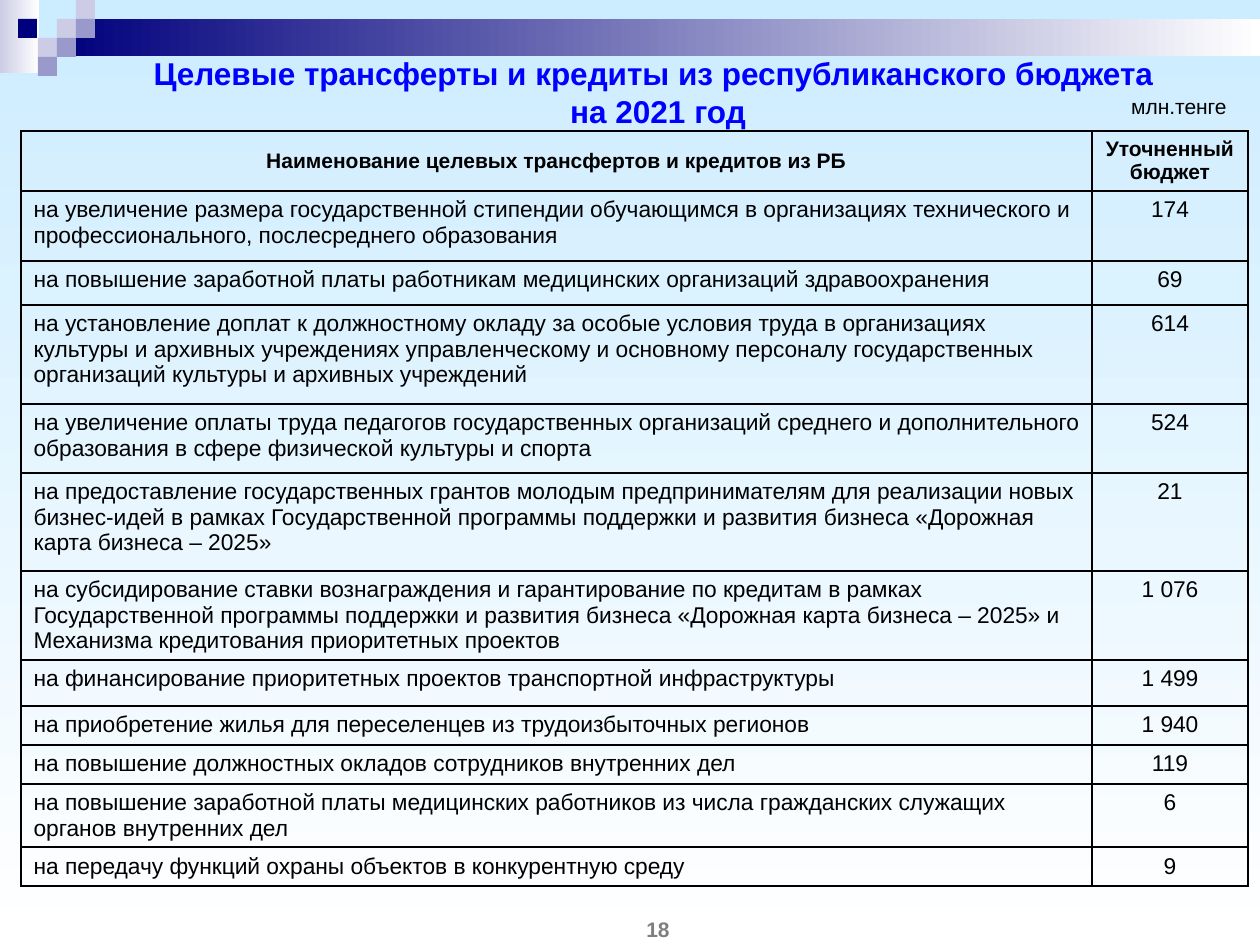
from dataclasses import dataclass

from lxml.etree import SubElement
from pptx import Presentation
from pptx.dml.color import RGBColor
from pptx.dml.fill import FillFormat
from pptx.enum.shapes import MSO_SHAPE
from pptx.enum.text import MSO_ANCHOR, PP_ALIGN
from pptx.oxml.ns import qn
from pptx.slide import Slide
from pptx.table import _Cell
from pptx.text.text import TextFrame
from pptx.util import Emu, Pt

PIXELS_PER_INCH = 126
FONT_NAME = "Arial"
BORDER_WIDTH = Pt(1)
SQUARE = 19

COLORS = {
    "sky": "CCECFF",
    "white": "FFFFFF",
    "navy": "00007D",
    "lavender": "CCCCE6",
    "violet": "9999CC",
    "title": "0000FF",
    "black": "000000",
    "gray": "7F7F7F",
}


@dataclass(frozen=True)
class Box:
    left: int
    top: int
    width: int
    height: int


@dataclass(frozen=True)
class Block:
    """A decorative rectangle; a second colour makes a left-to-right gradient."""
    box: Box
    color: str
    end_color: str = ""


@dataclass(frozen=True)
class TextStyle:
    size: int
    color: str = "black"
    bold: bool = False
    align: PP_ALIGN = PP_ALIGN.CENTER


@dataclass(frozen=True)
class Label:
    box: Box
    text: str
    style: TextStyle


@dataclass(frozen=True)
class BudgetRow:
    height: int
    purpose: str
    amount: str


def square(left: int, top: int, color: str) -> Block:
    return Block(Box(left, top, SQUARE, SQUARE), color)


BLOCKS = [
    Block(Box(0, 0, 39, 73), "lavender", "white"),
    Block(Box(57, 19, 1203, 37), "navy", "white"),
    square(57, 19, "lavender"),
    square(76, 0, "lavender"),
    square(76, 19, "violet"),
    square(38, 38, "lavender"),
    square(18, 19, "navy"),
    square(57, 38, "violet"),
    square(38, 57, "violet"),
]

LABELS = [
    Label(Box(57, 50, 1202, 84),
          "Целевые трансферты и кредиты из республиканского бюджета \vна 2021 год",
          TextStyle(18, "title", True)),
    Label(Box(532, 903, 252, 53), "18", TextStyle(12, "gray", True)),
    Label(Box(1092, 92, 174, 28), "млн.тенге", TextStyle(12)),
]

TABLE_LEFT, TABLE_TOP = 21, 131
COLUMN_WIDTHS = [1071, 156]
HEADER_STYLE = TextStyle(12, bold=True)
PURPOSE_STYLE = TextStyle(13, align=PP_ALIGN.LEFT)
AMOUNT_STYLE = TextStyle(13)

HEADER = BudgetRow(60, "Наименование целевых трансфертов и кредитов из РБ", "Уточненный бюджет")
BUDGET_ROWS = [
    BudgetRow(70, "на увеличение размера государственной стипендии обучающимся в организациях "
                  "технического и профессионального, послесреднего образования", "174"),
    BudgetRow(44, "на повышение заработной платы работникам медицинских организаций "
                  "здравоохранения", "69"),
    BudgetRow(99, "на установление доплат к должностному окладу за особые условия труда в "
                  "организациях культуры и архивных учреждениях управленческому и основному "
                  "персоналу государственных организаций культуры и архивных учреждений", "614"),
    BudgetRow(69, "на увеличение оплаты труда педагогов государственных организаций среднего и "
                  "дополнительного образования в сфере физической культуры и спорта", "524"),
    BudgetRow(98, "на предоставление государственных грантов молодым предпринимателям для "
                  "реализации новых бизнес-идей в рамках Государственной программы поддержки и "
                  "развития бизнеса «Дорожная карта бизнеса – 2025»", "21"),
    BudgetRow(89, "на субсидирование ставки вознаграждения и гарантирование по кредитам в рамках "
                  "Государственной программы поддержки и развития бизнеса «Дорожная карта "
                  "бизнеса – 2025» и Механизма кредитования приоритетных проектов", "1 076"),
    BudgetRow(46, "на финансирование приоритетных проектов транспортной инфраструктуры", "1 499"),
    BudgetRow(39, "на приобретение жилья для переселенцев из трудоизбыточных регионов", "1 940"),
    BudgetRow(39, "на повышение должностных окладов сотрудников внутренних дел", "119"),
    BudgetRow(63, "на повышение заработной платы медицинских работников из числа гражданских "
                  "служащих органов внутренних дел", "6"),
    BudgetRow(39, "на передачу функций охраны объектов в конкурентную среду", "9"),
]


def px(length: int) -> Emu:
    return Emu(round(length * 914400 / PIXELS_PER_INCH))


def place(box: Box) -> tuple[Emu, Emu, Emu, Emu]:
    return px(box.left), px(box.top), px(box.width), px(box.height)


def rgb(name: str) -> RGBColor:
    return RGBColor.from_string(COLORS[name])


def fill_gradient(fill: FillFormat, start: str, end: str, angle: int) -> None:
    fill.gradient()
    fill.gradient_angle = angle
    for stop, color in zip(fill.gradient_stops, (start, end)):
        stop.color.rgb = rgb(color)


def draw_block(slide: Slide, block: Block) -> None:
    shape = slide.shapes.add_shape(MSO_SHAPE.RECTANGLE, *place(block.box))
    shape.shadow.inherit = False
    shape.line.fill.background()
    if block.end_color:
        fill_gradient(shape.fill, block.color, block.end_color, 0)
    else:
        shape.fill.solid()
        shape.fill.fore_color.rgb = rgb(block.color)


def write_text(frame: TextFrame, text: str, style: TextStyle) -> None:
    paragraph = frame.paragraphs[0]
    paragraph.text = text
    paragraph.alignment = style.align
    paragraph.font.name = FONT_NAME
    paragraph.font.size = Pt(style.size)
    paragraph.font.bold = style.bold
    paragraph.font.color.rgb = rgb(style.color)


def draw_label(slide: Slide, label: Label) -> None:
    frame = slide.shapes.add_textbox(*place(label.box)).text_frame
    frame.word_wrap = True
    frame.vertical_anchor = MSO_ANCHOR.MIDDLE
    write_text(frame, label.text, label.style)


def draw_borders(cell: _Cell) -> None:
    properties = cell._tc.get_or_add_tcPr()
    for position, side in enumerate(("lnL", "lnR", "lnT", "lnB")):
        line = SubElement(properties, qn(f"a:{side}"), w=str(BORDER_WIDTH))
        properties.insert(position, line)
        fill = SubElement(line, qn("a:solidFill"))
        SubElement(fill, qn("a:srgbClr"), val=COLORS["black"])


def draw_table(slide: Slide) -> None:
    rows = [HEADER, *BUDGET_ROWS]
    box = Box(TABLE_LEFT, TABLE_TOP, sum(COLUMN_WIDTHS), sum(row.height for row in rows))
    table = slide.shapes.add_table(len(rows), len(COLUMN_WIDTHS), *place(box)).table
    table.first_row = table.horz_banding = False
    for column, width in zip(table.columns, COLUMN_WIDTHS):
        column.width = px(width)
    for table_row, row in zip(table.rows, rows):
        table_row.height = px(row.height)
        styles = (HEADER_STYLE,) * 2 if row is HEADER else (PURPOSE_STYLE, AMOUNT_STYLE)
        for cell, text, style in zip(table_row.cells, (row.purpose, row.amount), styles):
            cell.fill.background()
            draw_borders(cell)
            write_text(cell.text_frame, text, style)
    table.cell(0, 0).vertical_anchor = MSO_ANCHOR.MIDDLE


def main() -> None:
    presentation = Presentation()
    presentation.slide_width, presentation.slide_height = px(1260), px(945)
    slide = presentation.slides.add_slide(presentation.slide_layouts[6])
    fill_gradient(slide.background.fill, "sky", "white", 270)
    for block in BLOCKS:
        draw_block(slide, block)
    draw_table(slide)
    for label in LABELS:
        draw_label(slide, label)
    presentation.save("out.pptx")


if __name__ == "__main__":
    main()
